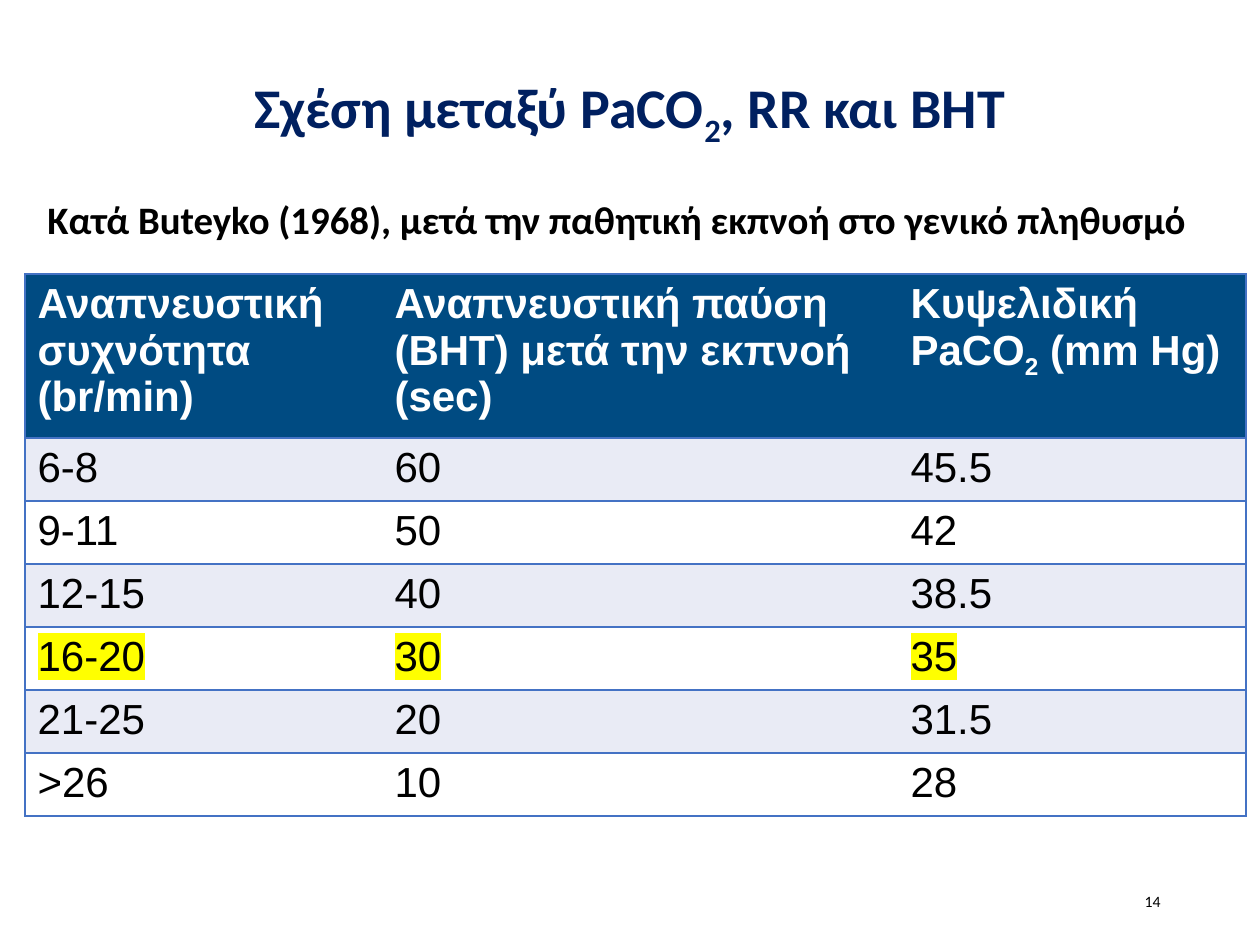
from lxml import etree
from pptx import Presentation
from pptx import util as u
from pptx.dml.color import RGBColor
from pptx.enum import text
from pptx.oxml.ns import qn

PX = 914400 // 126
COLORS = {
    "title": "002060", "ink": "000000", "white": "FFFFFF", "header": "004B82",
    "band": "E9EBF5", "border": "4472C4", "mark": "FFFF00",
}
HEADERS = [
    ["Αναπνευστική συχνότητα (br/min)"],
    ["Αναπνευστική παύση (BHT) μετά την εκπνοή (sec)"],
    ["Κυψελιδική PaCO", "2", " (mm Hg)"],
]
ROWS = [
    ("6-8", "60", "45.5"),
    ("9-11", "50", "42"),
    ("12-15", "40", "38.5"),
    ("16-20", "30", "35"),
    ("21-25", "20", "31.5"),
    (">26", "10", "28"),
]
MARKED_ROW = 4


def px(n):
    return u.Emu(n * PX)


def rgb(name):
    return RGBColor.from_string(COLORS[name])


def write(tf, parts, size, color="ink", font="Calibri", bold=False,
          align=text.PP_ALIGN.LEFT, spacing=1.0, mark=None):
    p = tf.paragraphs[0]
    p.alignment = align
    p.line_spacing = spacing
    for i, part in enumerate(parts):
        r = p.add_run()
        r.text = part
        r.font.size = u.Pt(size)
        r.font.bold = bold
        r.font.color.rgb = rgb(color)
        rPr = r._r.get_or_add_rPr()
        if mark:
            hl = etree.SubElement(rPr, qn("a:highlight"))
            etree.SubElement(hl, qn("a:srgbClr"), val=COLORS[mark])
        r.font.name = font
        if i % 2:
            rPr.set("baseline", "-25000")


def add_text(s, box, parts, size, anchor=text.MSO_ANCHOR.MIDDLE, **fmt):
    tf = s.shapes.add_textbox(*map(px, box)).text_frame
    tf.word_wrap = True
    tf.vertical_anchor = anchor
    write(tf, parts, size, **fmt)


def set_borders(cell, sides):
    tcPr = cell._tc.get_or_add_tcPr()
    for side in "LRTB":
        ln = etree.SubElement(tcPr, qn(f"a:ln{side}"), w=str(u.Pt(1)))
        if side in sides:
            fill = etree.SubElement(ln, qn("a:solidFill"))
            etree.SubElement(fill, qn("a:srgbClr"), val=COLORS["border"])
        else:
            etree.SubElement(ln, qn("a:noFill"))


def add_heading(s, box):
    x, y, w, h = box
    add_text(s, (x, y, w, 125), ["Σχέση μεταξύ PaCO", "2", ", RR και BHT"], 32,
             color="title", bold=True, align=text.PP_ALIGN.CENTER, spacing=0.9)
    add_text(s, (x + 35, y + 150, w - 59, h - 150),
             ["Κατά Buteyko (1968), μετά την παθητική εκπνοή στο γενικό πληθυσμό"],
             22.2, anchor=text.MSO_ANCHOR.TOP, bold=True, spacing=0.9)


def add_breathing_table(s, box):
    widths = (357, 516, 348)
    header_h = 154
    row_h = (box[3] - header_h) // len(ROWS)
    table = s.shapes.add_table(len(ROWS) + 1, len(widths), *map(px, box)).table
    for col, w in zip(table.columns, widths):
        col.width = px(w)
    cells = [HEADERS] + [[[value] for value in row] for row in ROWS]
    for i, row in enumerate(cells):
        table.rows[i].height = px(row_h if i else header_h)
        for j, parts in enumerate(row):
            cell = table.cell(i, j)
            sides = "TB" + "L" * (j == 0) + "R" * (j == len(widths) - 1)
            set_borders(cell, sides)
            fill = "header" if i == 0 else "band" if i % 2 else "white"
            cell.fill.solid()
            cell.fill.fore_color.rgb = rgb(fill)
            write(cell.text_frame, parts, 24, font="Arial", bold=i == 0,
                  color="ink" if i else "white",
                  mark="mark" if i == MARKED_ROW else None)


def add_page_number(s, box):
    add_text(s, box, ["14"], 9, align=text.PP_ALIGN.RIGHT)


def main():
    prs = Presentation()
    prs.slide_width, prs.slide_height = px(1260), px(945)
    s = prs.slides.add_slide(prs.slide_layouts[6])
    add_heading(s, (0, 45, 1260, 219))
    add_breathing_table(s, (25, 274, 1221, 508))
    add_page_number(s, (890, 876, 283, 50))
    prs.save("out.pptx")


if __name__ == "__main__":
    main()
